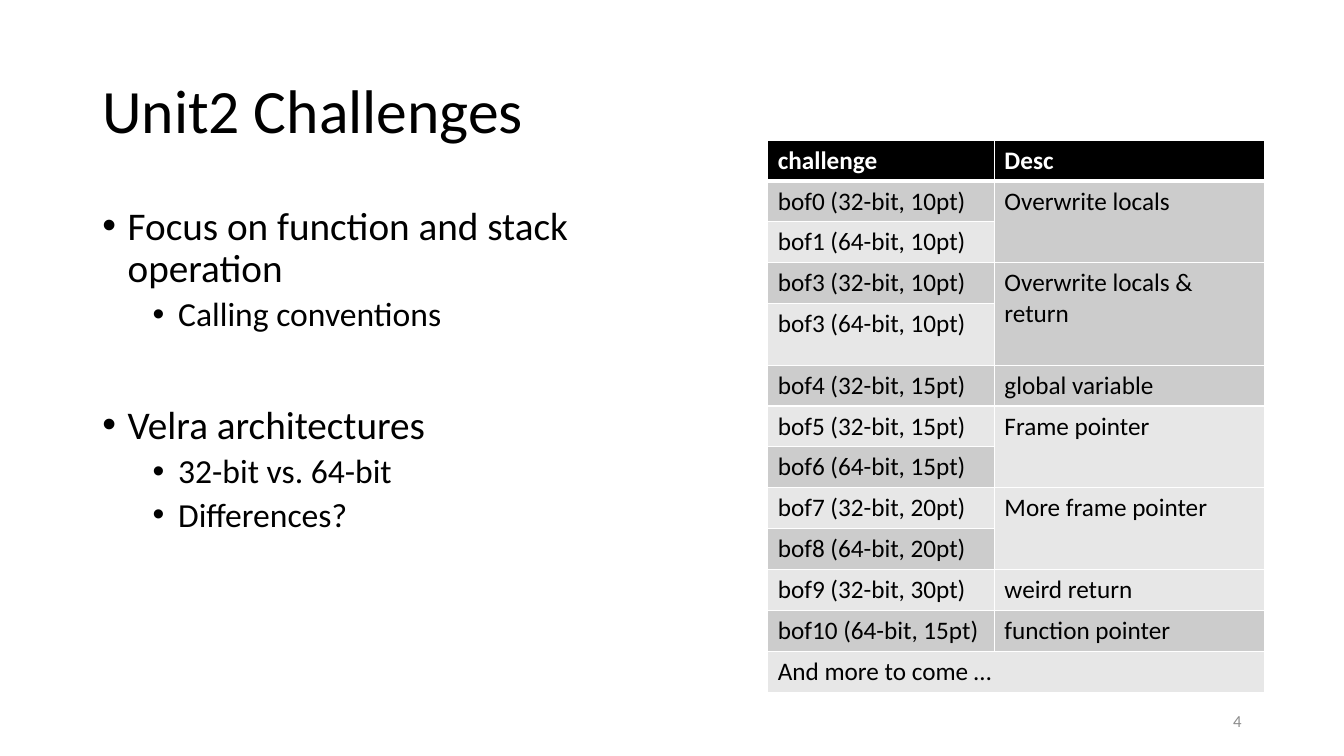
from dataclasses import dataclass

from lxml import etree
from pptx import Presentation
from pptx.dml.color import RGBColor
from pptx.enum.text import MSO_ANCHOR, PP_ALIGN
from pptx.oxml.ns import qn
from pptx.util import Cm, Pt

MIDDLE, TOP = MSO_ANCHOR.MIDDLE, MSO_ANCHOR.TOP
LEFT, RIGHT = PP_ALIGN.LEFT, PP_ALIGN.RIGHT
COLORS = {
    "text": "000000",
    "header": "000000",
    "inverse": "FFFFFF",
    "border": "FFFFFF",
    "dark_band": "CCCCCC",
    "light_band": "E7E7E7",
    "number": "8C8C8C",
}
FONT = "Calibri"
ROW_HEIGHT, TALL_ROW_HEIGHT, TALL_ROW = 1.03, 1.55, 4
COLUMN_WIDTHS = (5.71, 6.81)


@dataclass(frozen=True)
class Line:
    text: str
    size: float
    color: str = "text"
    bold: bool = False
    align: PP_ALIGN = LEFT
    spacing: float = 1.0
    before: float = 0
    indent: float = 0


@dataclass(frozen=True)
class Block:
    left: float
    top: float
    width: float
    height: float
    anchor: MSO_ANCHOR
    lines: tuple[Line, ...]


@dataclass(frozen=True)
class Challenge:
    name: str
    description: str = ""
    rows: int = 1
    columns: int = 1


def topic(text: str, before: float = 10) -> Line:
    return Line(text, 28, spacing=0.9, before=before, indent=0.64)


def detail(text: str) -> Line:
    return Line(text, 24, spacing=0.9, before=5, indent=1.91)


BLOCKS = (
    Block(2.33, 1.01, 29.21, 3.68, MIDDLE, (Line("Unit2 Challenges", 44, spacing=0.9),)),
    Block(2.33, 5.07, 14.4, 12.09, TOP, (
        topic("Focus on function and stack operation"),
        detail("Calling conventions"),
        topic("Velra architectures", before=51),
        detail("32-bit vs. 64-bit"),
        detail("Differences?"),
    )),
    Block(23.92, 17.65, 7.62, 1.01, MIDDLE, (Line("4", 12, "number", align=RIGHT),)),
)
CHALLENGES = (
    Challenge("challenge", "Desc"),
    Challenge("bof0 (32-bit, 10pt)", "Overwrite locals", rows=2),
    Challenge("bof1 (64-bit, 10pt)"),
    Challenge("bof3 (32-bit, 10pt)", "Overwrite locals & return", rows=2),
    Challenge("bof3 (64-bit, 10pt)"),
    Challenge("bof4 (32-bit, 15pt)", "global variable"),
    Challenge("bof5 (32-bit, 15pt)", "Frame pointer", rows=2),
    Challenge("bof6 (64-bit, 15pt)"),
    Challenge("bof7 (32-bit, 20pt)", "More frame pointer", rows=2),
    Challenge("bof8 (64-bit, 20pt)"),
    Challenge("bof9 (32-bit, 30pt)", "weird return"),
    Challenge("bof10 (64-bit, 15pt)", "function pointer"),
    Challenge("And more to come …", columns=2),
)


def rgb(name: str) -> RGBColor:
    return RGBColor.from_string(COLORS[name])


def apply_format(target, values: dict) -> None:
    for attribute, value in values.items():
        setattr(target, attribute, value)


def write_line(paragraph, line: Line) -> None:
    run = paragraph.add_run()
    run.text = line.text
    apply_format(run.font, {"name": FONT, "size": Pt(line.size), "bold": line.bold})
    run.font.color.rgb = rgb(line.color)
    apply_format(paragraph, {
        "alignment": line.align,
        "line_spacing": line.spacing,
        "space_before": Pt(line.before),
    })
    if line.indent:
        properties = paragraph._p.get_or_add_pPr()
        properties.set("marL", str(Cm(line.indent)))
        properties.set("indent", str(-Cm(0.64)))
        etree.SubElement(properties, qn("a:buFont"), typeface="Arial")
        etree.SubElement(properties, qn("a:buChar"), char="•")


def draw_block(slide, block: Block) -> None:
    box = slide.shapes.add_textbox(
        Cm(block.left), Cm(block.top), Cm(block.width), Cm(block.height))
    frame = box.text_frame
    apply_format(frame, {"word_wrap": True, "vertical_anchor": block.anchor})
    for index, line in enumerate(block.lines):
        paragraph = frame.add_paragraph() if index else frame.paragraphs[0]
        write_line(paragraph, line)


def style_cell(cell, row: int, fill: str) -> None:
    cell.fill.solid()
    cell.fill.fore_color.rgb = rgb(fill)
    properties = cell._tc.get_or_add_tcPr()
    thick_side = {0: "lnB", 1: "lnT"}.get(row)
    for position, side in enumerate(("lnL", "lnR", "lnT", "lnB")):
        width = Pt(3 if side == thick_side else 1)
        border = etree.Element(qn(f"a:{side}"), w=str(width))
        paint = etree.SubElement(border, qn("a:solidFill"))
        etree.SubElement(paint, qn("a:srgbClr"), val=COLORS["border"])
        properties.insert(position, border)


def draw_challenges(slide) -> None:
    heights = [ROW_HEIGHT] * len(CHALLENGES)
    heights[TALL_ROW] = TALL_ROW_HEIGHT
    table = slide.shapes.add_table(
        len(CHALLENGES), len(COLUMN_WIDTHS), Cm(19.35), Cm(3.53),
        Cm(sum(COLUMN_WIDTHS)), Cm(sum(heights))).table
    for column, width in zip(table.columns, COLUMN_WIDTHS):
        column.width = Cm(width)
    for row, (challenge, height) in enumerate(zip(CHALLENGES, heights)):
        table.rows[row].height = Cm(height)
        fill = "header" if row == 0 else "dark_band" if row % 2 else "light_band"
        color = "inverse" if row == 0 else "text"
        for column, text in enumerate((challenge.name, challenge.description)):
            cell = table.cell(row, column)
            style_cell(cell, row, fill)
            if text:
                write_line(cell.text_frame.paragraphs[0], Line(text, 18, color, bold=row == 0))
    for row, challenge in enumerate(CHALLENGES):
        if challenge.rows > 1:
            table.cell(row, 1).merge(table.cell(row + challenge.rows - 1, 1))
        if challenge.columns > 1:
            table.cell(row, 0).merge(table.cell(row, challenge.columns - 1))


def main() -> None:
    deck = Presentation()
    apply_format(deck, {"slide_width": Cm(33.87), "slide_height": Cm(19.05)})
    slide = deck.slides.add_slide(deck.slide_layouts[6])
    for block in BLOCKS:
        draw_block(slide, block)
    draw_challenges(slide)
    deck.save("out.pptx")


if __name__ == "__main__":
    main()
